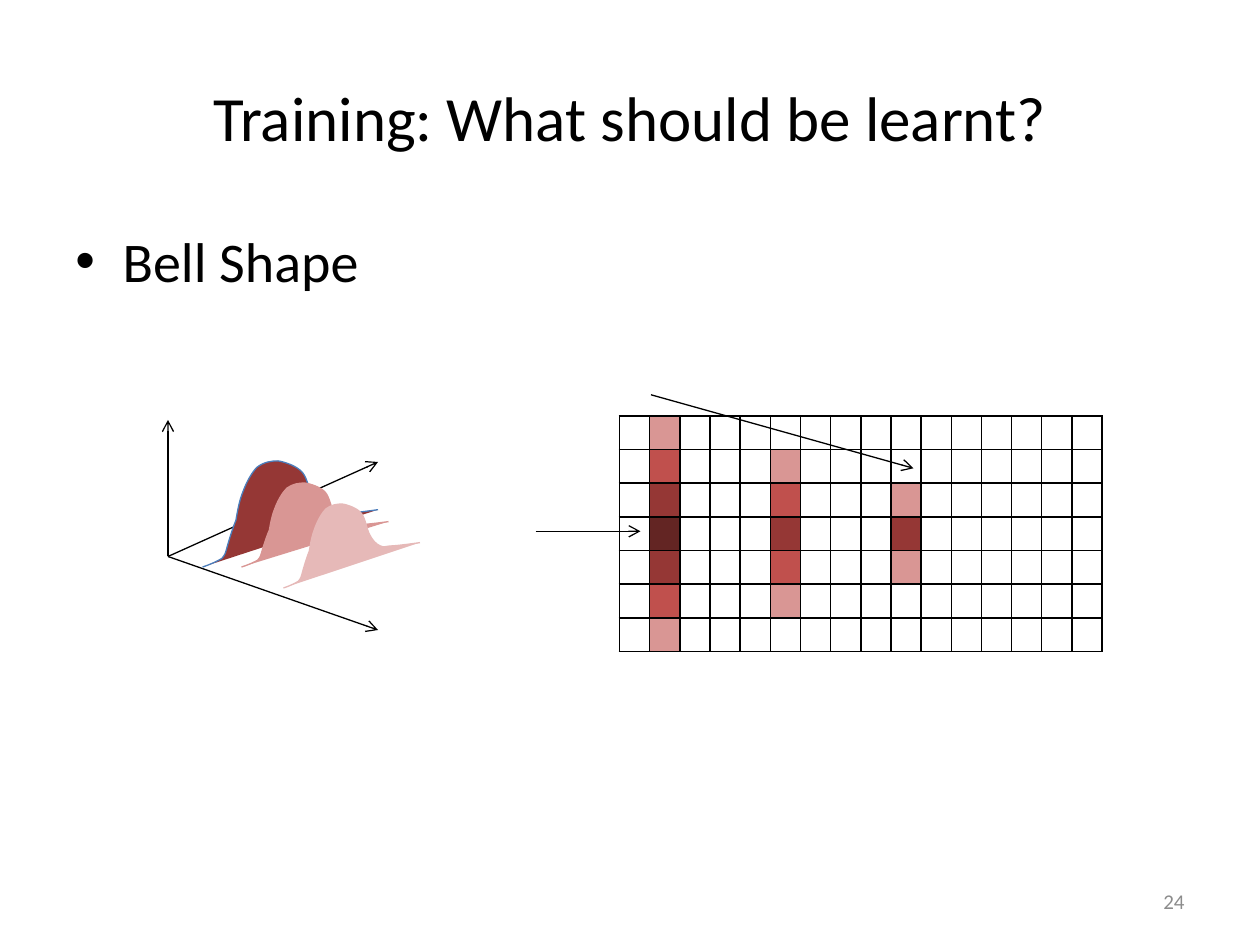
import dataclasses

import lxml.etree
import pptx
import pptx.dml.color
import pptx.enum.shapes
import pptx.enum.text
import pptx.oxml.ns
import pptx.util


@dataclasses.dataclass(frozen=True)
class Theme:
    font: str = "Calibri"
    ink: str = "000000"
    muted: str = "8C8C8C"
    outline: str = "4B7EBC"
    darkest: str = "632523"
    dark: str = "953735"
    middle: str = "C0504D"
    light: str = "D99694"
    pale: str = "E6B9B8"
    title_size: int = 36
    body_size: int = 32
    number_size: int = 12
    cell_size: int = 10
    line_width: float = 0.75
    border_width: float = 1


theme = Theme()
rgb = pptx.dml.color.RGBColor.from_string
qn = pptx.oxml.ns.qn
add_element = lxml.etree.SubElement
Align = pptx.enum.text.PP_ALIGN
Anchor = pptx.enum.text.MSO_ANCHOR

deck = pptx.Presentation()
deck.slide_width = pptx.util.Inches(10)
deck.slide_height = pptx.util.Inches(7.5)
page = deck.slides.add_slide(deck.slide_layouts[5])

# The page is a grid of 120 columns by 90 rows with square units.
unit = deck.slide_width // 120


def grid(*counts):
    """Turn counts of columns or rows into lengths."""
    return [round(count * unit) for count in counts]


def write(box, place, text, size, color, align, anchor):
    box.left, box.top, box.width, box.height = grid(*place)
    frame = box.text_frame
    frame.word_wrap = True
    frame.vertical_anchor = anchor
    para = frame.paragraphs[0]
    para.alignment = align
    span = para.add_run()
    span.text = text
    formats = {"name": theme.font, "size": pptx.util.Pt(size), "bold": False}
    for name, value in formats.items():
        setattr(span.font, name, value)
    span.font.color.rgb = rgb(color)
    return para


# Text
write(page.shapes.title, (6, 3.6, 108, 15), "Training: What should be learnt?",
      theme.title_size, theme.ink, Align.CENTER, Anchor.MIDDLE)

body = page.shapes.add_textbox(0, 0, unit, unit)
para = write(body, (6, 21, 108, 59.4), "Bell Shape",
             theme.body_size, theme.ink, Align.LEFT, Anchor.TOP)
para.space_before = pptx.util.Pt(0.2 * theme.body_size)
indent = grid(4.5)[0]
bullet_format = para._p.get_or_add_pPr()
bullet_format.set("marL", str(indent))
bullet_format.set("indent", str(-indent))
add_element(bullet_format, qn("a:buFont"), typeface="Arial")
add_element(bullet_format, qn("a:buChar"), char="•")

# Axes, all from one origin, and the arrows that point at the table
origin = (16, 53)
axes = [(origin, end) for end in [(36, 44), (16, 40), (36, 60)]]
pointers = [((62, 37.6), (87, 44.6)), ((51, 50.6), (61, 50.6))]

# Bell outline in percent of its width and height: a start, then cubic curves
bell_start = (0, 100)
bell_curves = [
    ((4, 98), (9, 94), (11, 92)),
    ((13, 88), (13, 87), (14, 81)),
    ((15, 75), (17, 64), (19, 56)),
    ((20, 46), (21, 37), (23, 29)),
    ((25, 20), (28, 11), (31, 6)),
    ((35, 1), (39, 0), (43, 0)),
    ((47, 1), (54, 5), (57, 11)),
    ((60, 17), (61, 30), (63, 36)),
    ((65, 43), (68, 48), (71, 50)),
    ((73, 52), (73, 51), (78, 50)),
    ((83, 50), (100, 46), (100, 46)),
]
bells = [
    ((19.3, 43.9, 16.7, 10.1), theme.dark, theme.outline),
    ((23, 46, 14, 8), theme.light, theme.light),
    ((27, 48, 13, 8), theme.pale, theme.pale),
]

# Table: the shades of each coloured column run from its middle row outwards
column_count, row_count = 16, 7
shades = {
    1: [theme.darkest, theme.dark, theme.middle, theme.light],
    5: [theme.dark, theme.middle, theme.light],
    9: [theme.dark, theme.light],
}

# Drawn from back to front: axes, bells, table, pointers
for group in (axes, pointers):
    for start, end in group:
        arrow = page.shapes.add_connector(
            pptx.enum.shapes.MSO_CONNECTOR.STRAIGHT, *grid(*start, *end))
        arrow.line.color.rgb = rgb(theme.ink)
        arrow.line.width = pptx.util.Pt(theme.line_width)
        properties = arrow._element.spPr
        add_element(properties.find(qn("a:ln")), qn("a:tailEnd"), type="arrow")
        add_element(properties, qn("a:effectLst"))

    if group is pointers:
        break

    for (left, top, width, height), fill, edge in bells:
        corners = [grid(left + x * width / 100, top + y * height / 100)
                   for x, y in [bell_start] + [curve[-1] for curve in bell_curves]]
        builder = page.shapes.build_freeform(*corners[0])
        builder.add_line_segments(corners[1:], close=False)
        bell = builder.convert_to_shape()
        # Each straight segment becomes the cubic curve that ends at its corner.
        segments = list(bell._element.iter(qn("a:lnTo")))
        for segment, curve in zip(segments, bell_curves):
            segment.tag = qn("a:cubicBezTo")
            segment.remove(segment[0])
            for x, y in curve:
                across, down = grid(x * width / 100, y * height / 100)
                add_element(segment, qn("a:pt"), x=str(across), y=str(down))
        bell.shadow.inherit = False
        bell.fill.solid()
        bell.fill.fore_color.rgb = rgb(fill)
        bell.line.color.rgb = rgb(edge)
        bell.line.width = pptx.util.Pt(theme.line_width)

    table_frame = page.shapes.add_table(
        row_count, column_count, *grid(59, 39.6, 43.68, 22.4))
    table = table_frame.table
    table.first_row = table.horz_banding = False
    for column in table.columns:
        column.width = grid(2.73)[0]
    for row in table.rows:
        row.height = grid(3)[0]
    table_frame.height = grid(22.4)[0]
    for row in range(row_count):
        for column in range(column_count):
            cell = table.cell(row, column)
            add_element(cell.text_frame.paragraphs[0]._p,
                        qn("a:endParaRPr"), sz=str(theme.cell_size * 100))
            for side in "LRTB":
                border = add_element(
                    cell._tc.get_or_add_tcPr(), qn(f"a:ln{side}"),
                    w=str(pptx.util.Pt(theme.border_width)))
                paint = add_element(border, qn("a:solidFill"))
                add_element(paint, qn("a:srgbClr"), val=theme.ink)
            distance = abs(row - row_count // 2)
            column_shades = shades.get(column, [])
            if distance < len(column_shades):
                cell.fill.solid()
                cell.fill.fore_color.rgb = rgb(column_shades[distance])
            else:
                cell.fill.background()

number = page.shapes.add_textbox(0, 0, unit, unit)
write(number, (86, 83.4, 28, 4.8), "24",
      theme.number_size, theme.muted, Align.RIGHT, Anchor.MIDDLE)

deck.save("out.pptx")
